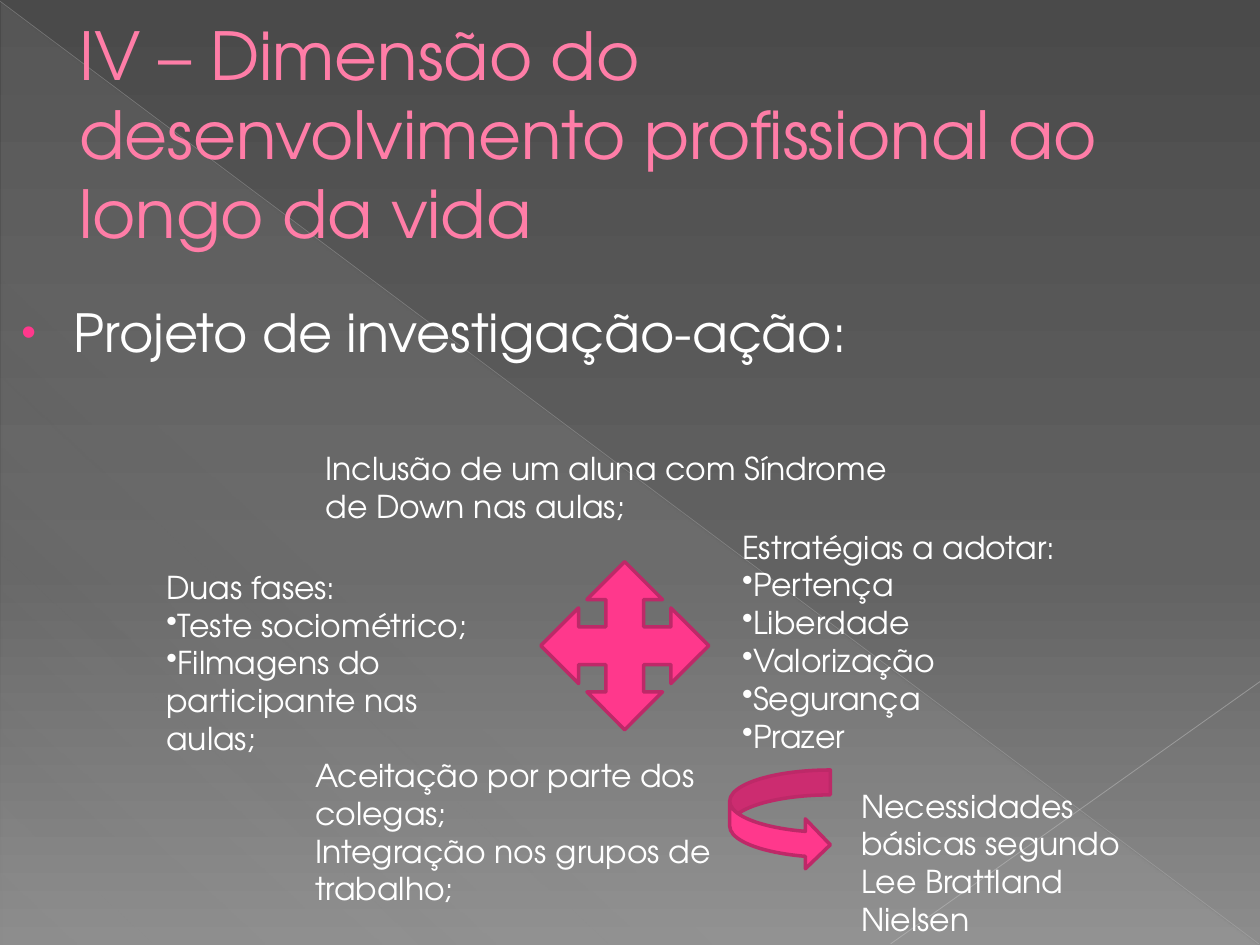
"""Build a slide on lifelong professional development."""
import pptx
import pptx.dml.color
import pptx.enum.shapes
import pptx.enum.text
import pptx.oxml
import pptx.oxml.ns
import pptx.util

Pt = pptx.util.Pt
RGB = pptx.dml.color.RGBColor
qn = pptx.oxml.ns.qn
Kind = pptx.enum.shapes.MSO_SHAPE
Fit = pptx.enum.text.MSO_AUTO_SIZE
Anchor = pptx.enum.text.MSO_ANCHOR

FONT = "TeX Gyre Adventor"
WHITE = RGB(0xFF, 0xFF, 0xFF)
PINK = RGB(0xFF, 0x38, 0x8C)
ROSE = RGB(0xFF, 0x7D, 0xA7)
EDGE = RGB(0xBD, 0x29, 0x68)
DARK = RGB(0x4A, 0x4A, 0x4A)
MID = RGB(0x62, 0x62, 0x62)
LIGHT = RGB(0x8C, 0x8C, 0x8C)
PALE = RGB(0xD2, 0xD2, 0xD2)
LONG = RGB(0xBF, 0xBF, 0xBF)
SHORT = RGB(0xC6, 0xC6, 0xC6)


def add(node, tag, **attrs):
    """Append a drawing element with attributes and return it."""
    child = pptx.oxml.parse_xml(f"<a:{tag} {pptx.oxml.ns.nsdecls('a')}/>")
    for name, value in attrs.items():
        child.set(name, str(value))
    node.append(child)
    return child


def blend(fill, node, angle, stops):
    """Give a fill a gradient of (percent, colour, opacity) stops."""
    fill.gradient()
    fill.gradient_angle = 360 - angle
    group = next(node.iter(qn("a:gsLst")))
    for old in list(group):
        group.remove(old)
    for pos, color, alpha in stops:
        tone = add(add(group, "gs", pos=pos * 1000), "srgbClr", val=color)
        add(tone, "alpha", val=alpha * 1000)


def write(frame, lines, size=18, color=WHITE, left=0, hang=0,
          dots=(), tint=None, fit=Fit.SHAPE_TO_FIT_TEXT, anchor=Anchor.TOP):
    """Fill a text frame with formatted lines, bulleting those in dots."""
    frame.text = "\n".join(lines)
    frame.word_wrap = True
    frame.auto_size = fit
    frame.vertical_anchor = anchor
    for num, para in enumerate(frame.paragraphs):
        para.alignment = pptx.enum.text.PP_ALIGN.LEFT
        font = para.runs[0].font
        font.name, font.size = FONT, Pt(size)
        font.color.rgb = color
        props = para.runs[0].font
        props = para._p.get_or_add_pPr()
        props.set("marL", str(Pt(left)))
        props.set("indent", str(Pt(hang)))
        if num in dots:
            if tint:
                add(add(props, "buClr"), "srgbClr", val=tint)
                add(props, "buSzPct", val=80000)
            add(props, "buChar", char="•")
        else:
            add(props, "buNone")


def stroke(slide, start, end, color, width, alpha):
    """Draw a thin translucent line."""
    line = slide.shapes.add_connector(
        pptx.enum.shapes.MSO_CONNECTOR.STRAIGHT, *map(Pt, start + end))
    line.line.width = Pt(width)
    line.line.color.rgb = color
    add(next(line.element.iter(qn("a:srgbClr"))), "alpha", val=alpha * 1000)
    add(line.element.spPr, "effectLst")


def backdrop(slide, box):
    """Paint the gradient, the pale triangle and the two lines."""
    x, y, w, h = box
    blend(slide.background.fill, slide.element, 90,
          [(0, DARK, 100), (60, MID, 100), (100, LIGHT, 100)])
    wedge = slide.shapes.add_shape(
        Kind.RIGHT_TRIANGLE, Pt(x + 0.7), Pt(y + 1.4), Pt(w - 1.4), Pt(h - 1.4))
    wedge.shadow.inherit = False
    wedge.line.fill.background()
    blend(wedge.fill, wedge.element, 133,
          [(0, PALE, 10), (70, PALE, 8), (100, PALE, 1)])
    stroke(slide, (x, y + 0.7), (x + w - 0.7, y + h - 0.7), LONG, 0.39, 35)
    stroke(slide, (x + w, y + 389.5), (x + 509, y + h - 0.7), SHORT, 0.47, 45)


def place(slide, holder, box, lines, **style):
    """Bring a placeholder to the front, place it and write it."""
    slide.shapes.element.append(holder.element)
    holder.left, holder.top, holder.width, holder.height = map(Pt, box)
    write(holder.text_frame, lines, fit=Fit.NONE, **style)


def heading(slide, box):
    """Place the title and the lead bullet."""
    x, y, w, h = box
    title, body = slide.placeholders
    place(slide, title, (x, y, w, 110),
          ["IV – Dimensão do desenvolvimento profissional ao longo da vida"],
          size=37.8, color=ROSE, left=38, anchor=Anchor.MIDDLE)
    place(slide, body, (x, y + h - 45, w, 45),
          ["Projeto de investigação-ação:"],
          size=30, left=35, hang=-30, dots=(0,), tint=PINK)


def arrow(slide, kind, box):
    """Draw a pink block arrow."""
    shape = slide.shapes.add_shape(kind, *map(Pt, box))
    shape.shadow.inherit = False
    shape.fill.solid()
    shape.fill.fore_color.rgb = PINK
    shape.line.color.rgb = EDGE
    shape.line.width = Pt(2)


def diagram(slide, box):
    """Set the notes around the four-way arrow."""
    x, y, w, h = box
    arrow(slide, Kind.QUAD_ARROW, (x + 221, y + 68, 96, 96))
    arrow(slide, Kind.CURVED_RIGHT_ARROW, (x + 329, y + 187, 57.5, 57))
    notes = [
        ((91, 0, 363, 51),
         ["Inclusão de um aluna com Síndrome de Down nas aulas;"], ()),
        ((0, 68, 207, 117),
         ["Duas fases:", "Teste sociométrico;",
          "Filmagens do participante nas aulas;"], range(1, 3)),
        ((329, 45, 221, 138),
         ["Estratégias a adotar:", "Pertença", "Liberdade", "Valorização",
          "Segurança", "Prazer"], range(1, 6)),
        ((w - 187, h - 94, 187, 94),
         ["Necessidades básicas segundo", "Lee Brattland Nielsen"], ()),
        ((85, 175.5, 260.5, 94),
         ["Aceitação por parte dos colegas;",
          "Integração nos grupos de trabalho;"], ()),
    ]
    for (dx, dy, wide, high), lines, dots in notes:
        note = slide.shapes.add_textbox(
            Pt(x + dx), Pt(y + dy), Pt(wide), Pt(high))
        write(note.text_frame, lines, dots=dots)


def main():
    """Build and save the slide."""
    deck = pptx.Presentation()
    deck.slide_width, deck.slide_height = Pt(720), Pt(540)
    slide = deck.slides.add_slide(deck.slide_layouts[1])
    backdrop(slide, (0, 0, 720, 540))
    heading(slide, (0, 21, 648, 192))
    diagram(slide, (88, 253, 584, 287))
    deck.save("out.pptx")


if __name__ == "__main__":
    main()
